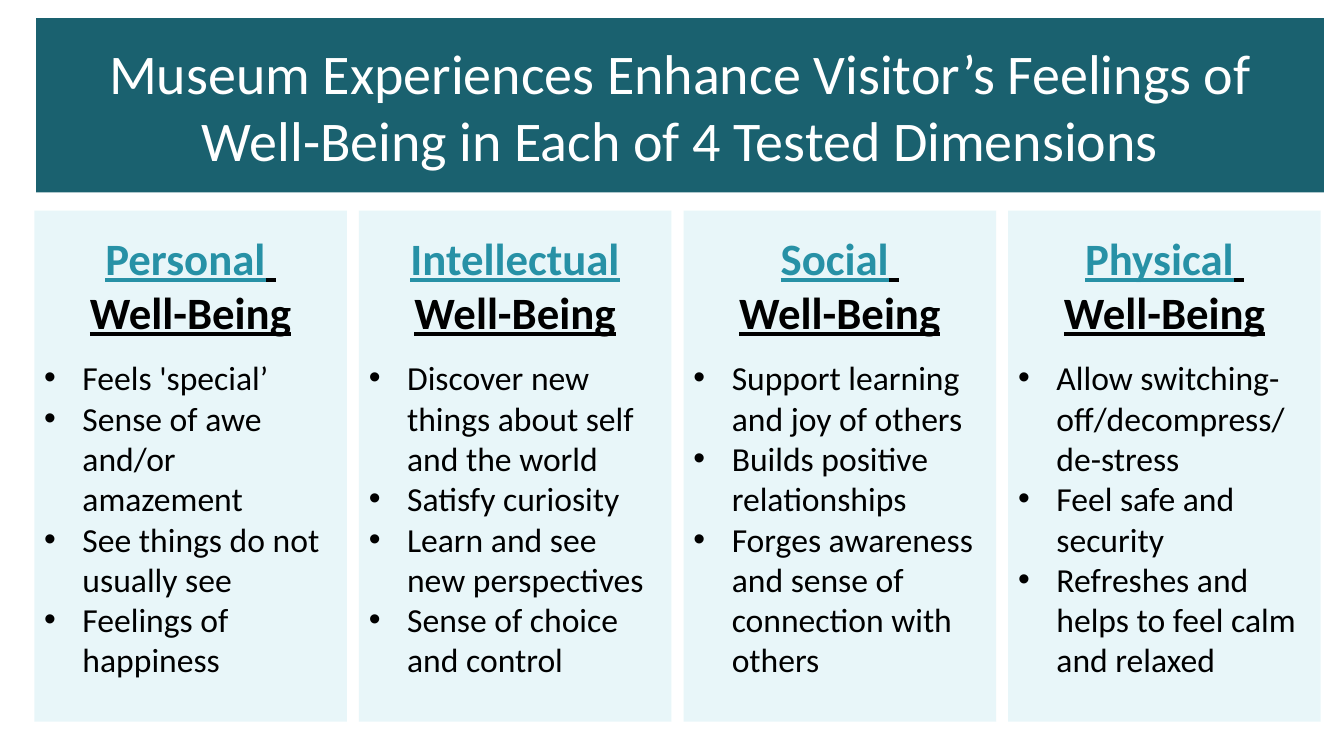
from dataclasses import dataclass

from lxml import etree
from pptx import Presentation
from pptx.dml.color import RGBColor
from pptx.enum import shapes, text
from pptx.oxml import ns
from pptx.util import Inches, Pt

HEADLINE = ("Museum Experiences Enhance Visitor’s Feelings of "
            "Well-Being in Each of 4 Tested Dimensions")

# Dimension, the heading lines that follow its name, benefits
DIMENSIONS = [
    ("Personal", [" ", "Well-Being"], [
        "Feels 'special’",
        "Sense of awe and/or amazement",
        "See things do not usually see",
        "Feelings of happiness",
    ]),
    ("Intellectual", [" Well-Being"], [
        "Discover new things about self and the world",
        "Satisfy curiosity",
        "Learn and see new perspectives",
        "Sense of choice and control",
    ]),
    ("Social", [" ", "Well-Being"], [
        "Support learning and joy of others",
        "Builds positive relationships",
        "Forges awareness and sense of connection with others",
    ]),
    ("Physical", [" ", "Well-Being"], [
        "Allow switching-off/decompress/ de-stress",
        "Feel safe and security",
        "Refreshes and helps to feel calm and relaxed",
    ]),
]


@dataclass(frozen=True)
class Theme:
    font: str = "Calibri"
    banner: str = "1A616F"
    panel: str = "D9F1F6"
    accent: str = "2791A6"
    ink: str = "000000"
    light: str = "FFFFFF"
    panel_opacity: int = 60
    headline_size: int = 40
    heading_size: int = 32
    benefit_size: int = 24
    heading_gap: float = 13.4


THEME = Theme()
PANEL_LEFT, PANEL_TOP = 0.34, 2.09
PANEL_WIDTH, PANEL_HEIGHT = 3.1, 5.07
PANEL_PITCH = 3.22
BULLET_INDENT = 0.38


def add_panel(slide, left, top, width, height, color):
    panel = slide.shapes.add_shape(
        shapes.MSO_SHAPE.RECTANGLE,
        Inches(left), Inches(top), Inches(width), Inches(height))
    panel.shadow.inherit = False
    panel.fill.solid()
    panel.fill.fore_color.rgb = RGBColor.from_string(color)
    panel.line.fill.background()
    panel.text_frame.word_wrap = True
    return panel


def set_opacity(shape, percent):
    color = shape.fill._xPr.find(ns.qn("a:solidFill"))[0]
    etree.SubElement(color, ns.qn("a:alpha"), val=str(percent * 1000))


def add_run(paragraph, words, size, color, heading=False):
    run = paragraph.add_run()
    run.text = words
    run.font.name = THEME.font
    run.font.size = Pt(size)
    run.font.bold = run.font.underline = heading
    run.font.color.rgb = RGBColor.from_string(color)


def set_bullet(paragraph):
    properties = paragraph._p.get_or_add_pPr()
    indent = Inches(BULLET_INDENT)
    properties.set("marL", str(indent))
    properties.set("indent", str(-indent))
    etree.SubElement(properties, ns.qn("a:buFont"), typeface="Arial")
    etree.SubElement(properties, ns.qn("a:buChar"), char="•")


def add_banner(slide):
    banner = add_panel(slide, 0.36, 0.18, 12.77, 1.73, THEME.banner)
    banner.text_frame.vertical_anchor = text.MSO_ANCHOR.MIDDLE
    headline = banner.text_frame.paragraphs[0]
    headline.alignment = text.PP_ALIGN.CENTER
    add_run(headline, HEADLINE, THEME.headline_size, THEME.light)


def add_dimension(slide, left, name, heading_lines, benefits):
    panel = add_panel(slide, left, PANEL_TOP, PANEL_WIDTH, PANEL_HEIGHT, THEME.panel)
    set_opacity(panel, THEME.panel_opacity)
    frame = panel.text_frame
    frame.vertical_anchor = text.MSO_ANCHOR.TOP
    frame.margin_top = Inches(0.2)

    heading = frame.paragraphs[0]
    add_run(heading, name, THEME.heading_size, THEME.accent, heading=True)
    for index, line in enumerate(heading_lines):
        if index:
            heading = frame.add_paragraph()
        heading.alignment = text.PP_ALIGN.CENTER
        add_run(heading, line, THEME.heading_size, THEME.ink, heading=True)
    heading.space_after = Pt(THEME.heading_gap)

    for benefit in benefits:
        item = frame.add_paragraph()
        item.alignment = text.PP_ALIGN.LEFT
        set_bullet(item)
        add_run(item, benefit, THEME.benefit_size, THEME.ink)


def main():
    deck = Presentation()
    deck.slide_width, deck.slide_height = Inches(13.33), Inches(7.5)
    slide = deck.slides.add_slide(deck.slide_layouts[6])
    for column, dimension in enumerate(DIMENSIONS):
        add_dimension(slide, PANEL_LEFT + column * PANEL_PITCH, *dimension)
    add_banner(slide)
    deck.save("out.pptx")


if __name__ == "__main__":
    main()
